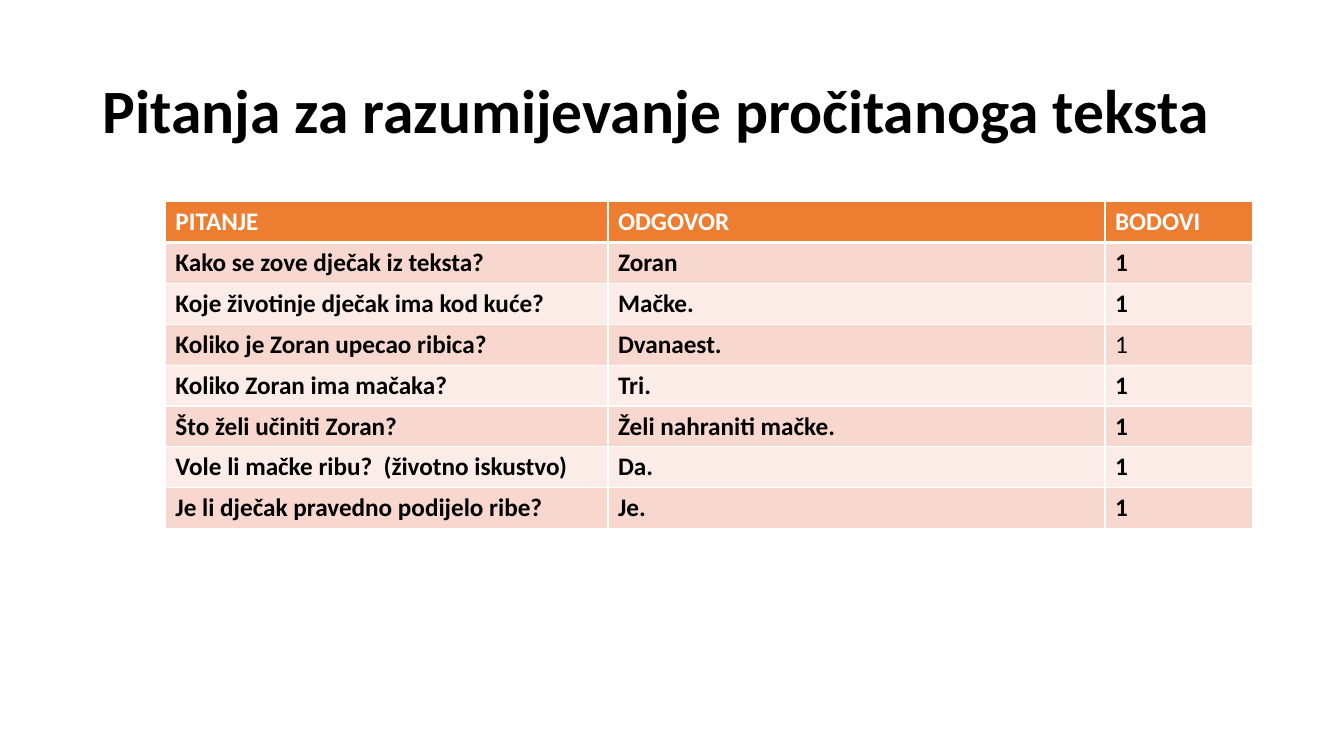
from lxml import etree
from pptx import Presentation
from pptx.dml.color import RGBColor
from pptx.enum.text import MSO_ANCHOR, PP_ALIGN
from pptx.oxml.ns import qn
from pptx.util import Inches, Pt

COLORS = {"header": "ED7D31", "odd": "F8D7CE", "even": "FCECE8",
          "text": "000000", "white": "FFFFFF"}
COL_WIDTHS = [4.39, 4.93, 1.46]
HEADINGS = ("PITANJE", "ODGOVOR", "BODOVI")
QUESTIONS = [
    ("Kako se zove dječak iz teksta?", "Zoran"),
    ("Koje životinje dječak ima kod kuće?", "Mačke."),
    ("Koliko je Zoran upecao ribica?", "Dvanaest."),
    ("Koliko Zoran ima mačaka?", "Tri."),
    ("Što želi učiniti Zoran?", "Želi nahraniti mačke."),
    ("Vole li mačke ribu?  (životno iskustvo)", "Da."),
    ("Je li dječak pravedno podijelo ribe?", "Je."),
]
PLAIN_CELL = (3, 2)


def write(tf, text, size, color, bold=True):
    p = tf.paragraphs[0]
    p.alignment = PP_ALIGN.LEFT
    r = p.add_run()
    r.text = text
    for name, value in {"name": "Calibri", "size": Pt(size), "bold": bold}.items():
        setattr(r.font, name, value)
    r.font.color.rgb = RGBColor.from_string(COLORS[color])
    return p


def add_borders(cell, widths):
    """Draw white borders; widths maps L, R, T, B (in that order) to points."""
    tc_pr = cell._tc.get_or_add_tcPr()
    for i, (side, width) in enumerate(widths.items()):
        ln = etree.Element(qn(f"a:ln{side}"), w=str(Pt(width)))
        fill = etree.SubElement(ln, qn("a:solidFill"))
        etree.SubElement(fill, qn("a:srgbClr"), val=COLORS["white"])
        tc_pr.insert(i, ln)


prs = Presentation()
prs.slide_width, prs.slide_height = Inches(13.33), Inches(7.5)
s = prs.slides.add_slide(prs.slide_layouts[5])

title = s.shapes.title
title.left, title.top = Inches(0.92), Inches(0.4)
title.width, title.height = Inches(11.5), Inches(1.45)
title.text_frame.vertical_anchor = MSO_ANCHOR.MIDDLE
p = write(title.text_frame, "Pitanja za razumijevanje pročitanoga teksta", 44, "text")
p.line_spacing = 0.9

rows = [HEADINGS] + [(question, answer, "1") for question, answer in QUESTIONS]
table = s.shapes.add_table(len(rows), len(COL_WIDTHS), Inches(1.64), Inches(2),
                           Inches(sum(COL_WIDTHS)), Inches(3.24)).table
for column, width in zip(table.columns, COL_WIDTHS):
    column.width = Inches(width)

for i, row in enumerate(rows):
    fill = "header" if i == 0 else "odd" if i % 2 else "even"
    borders = {"L": 1, "R": 1, "T": 3 if i == 1 else 1, "B": 3 if i == 0 else 1}
    for j, text in enumerate(row):
        cell = table.cell(i, j)
        cell.fill.solid()
        cell.fill.fore_color.rgb = RGBColor.from_string(COLORS[fill])
        add_borders(cell, borders)
        write(cell.text_frame, text, 18, "text" if i else "white", (i, j) != PLAIN_CELL)

prs.save("out.pptx")
